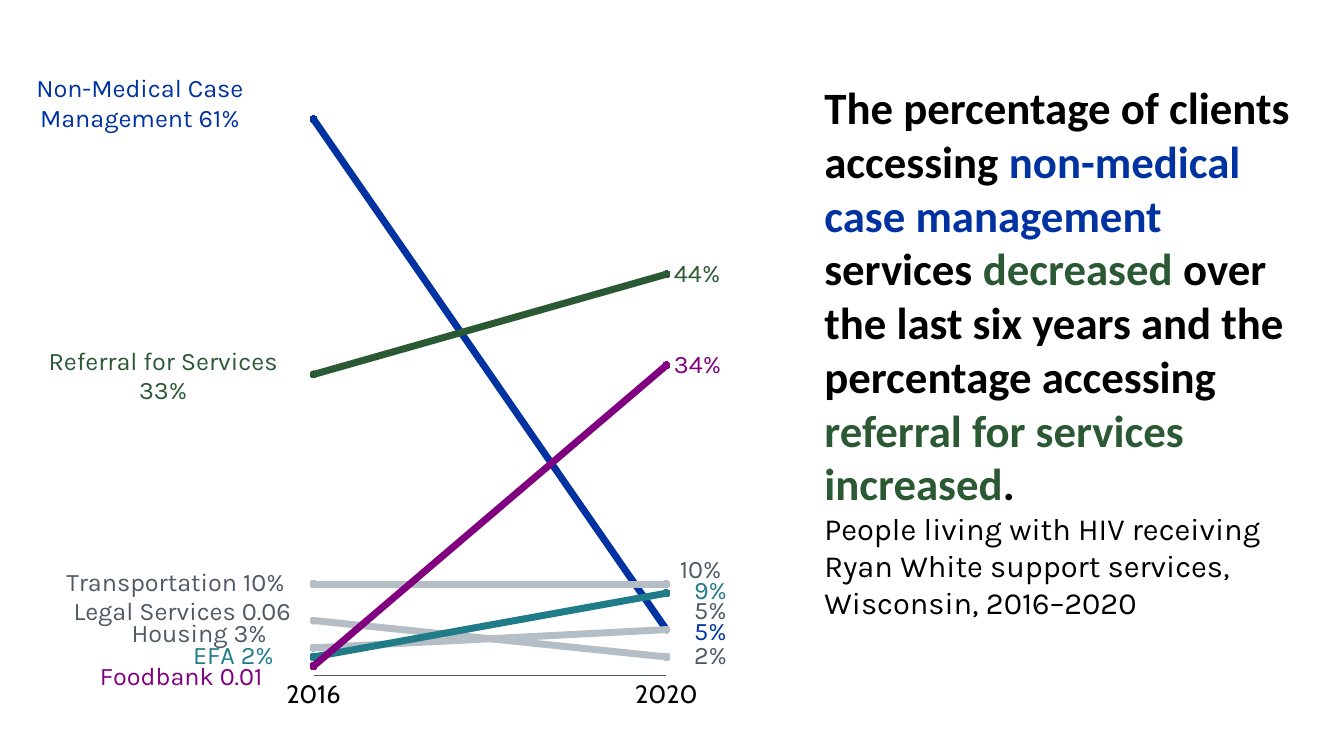
from dataclasses import dataclass

from lxml.etree import SubElement
from pptx import Presentation
from pptx.chart.data import CategoryChartData
from pptx.dml.color import RGBColor
from pptx.enum.chart import (XL_CHART_TYPE, XL_LABEL_POSITION, XL_MARKER_STYLE,
                             XL_TICK_LABEL_POSITION, XL_TICK_MARK)
from pptx.oxml import parse_xml
from pptx.oxml.ns import nsdecls, qn
from pptx.util import Inches, Pt

SLIDE_WIDTH, SLIDE_HEIGHT = Inches(13.33), Inches(7.5)
CHART_WIDTH, CHART_HEIGHT = 7.61, 7.08
BLACK, SLATE, SILVER = "000000", "4F5A65", "B5BDC5"
BLUE, GREEN, TEAL, PURPLE = "0033A1", "2A5934", "207C88", "800080"


@dataclass
class Service:
    """One line; label shifts are inches from the usual place beside the point."""
    name: str
    values: tuple[float, float]
    line: str
    ink: str
    start_label: tuple[str, ...]
    start_shift: tuple[float, float]
    end_shift: tuple[float, float] = (0, 0)


@dataclass
class Span:
    text: str
    color: str = BLACK


SERVICES = [
    Service("Non-Medical Case Management", (0.61, 0.05), BLUE, BLUE,
            ("Non-Medical Case", "Management 61%"), (-0.62, -0.15), (0.2, 0.02)),
    Service("Referral for Services", (0.33, 0.44), GREEN, GREEN,
            ("Referral for Services", "33%"), (-0.28, 0.02)),
    Service("Transportation", (0.1, 0.1), SILVER, SLATE,
            ("Transportation 10%",), (-0.21, -0.01), (0.06, -0.14)),
    Service("Legal Services", (0.06, 0.02), SILVER, SLATE,
            ("Legal Services 0.06",), (-0.15, -0.08), (0.2, -0.01)),
    Service("Housing", (0.03, 0.05), SILVER, SLATE,
            ("Housing 3%",), (-0.39, -0.14), (0.2, -0.18)),
    Service("EFA", (0.02, 0.09), TEAL, TEAL,
            ("EFA 2%",), (-0.32, -0.01), (0.2, -0.02)),
    Service("Foodbank", (0.01, 0.34), PURPLE, PURPLE,
            ("Foodbank 0.01",), (-0.43, 0.11)),
]
HEADLINE = [
    Span("The percentage of clients accessing "),
    Span("non-medical case management ", BLUE),
    Span("services "),
    Span("decreased", GREEN),
    Span(" over the last six years and the percentage accessing "),
    Span("referral for services increased", GREEN),
    Span("."),
]
CAPTION = [Span("People living with HIV receiving Ryan White support services, "
                "Wisconsin, 2016–2020")]


def rgb(color: str) -> RGBColor:
    return RGBColor.from_string(color)


def style_font(font, name: str, size: float, color: str, bold: bool = False) -> None:
    font.name, font.size, font.bold = name, Pt(size), bold
    font.color.rgb = rgb(color)


def add_spans(para, spans: list[Span], name: str, size: float, bold: bool = False) -> None:
    for span in spans:
        run = para.add_run()
        run.text = span.text
        style_font(run.font, name, size, span.color, bold)


def set_layout(parent, index: int, **shares) -> None:
    """Place a chart part by hand, with shares of the chart's size."""
    for old in parent.findall(qn("c:layout")):
        parent.remove(old)
    layout = parse_xml(f"<c:layout {nsdecls('c')}><c:manualLayout/></c:layout>")
    for tag, value in shares.items():
        SubElement(layout[0], qn(f"c:{tag}")).set("val", str(value))
    parent.insert(index, layout)


def style_series(series, service: Service) -> None:
    series.smooth = False
    series.format.line.color.rgb = rgb(service.line)
    series.format.line.width = Pt(5)
    marker = series.marker
    marker.style, marker.size = XL_MARKER_STYLE.CIRCLE, 5
    marker.format.fill.solid()
    marker.format.fill.fore_color.rgb = rgb(service.line)
    marker.format.line.color.rgb = rgb(service.line)


def label_series(series, service: Service) -> None:
    labels = series.data_labels
    labels.show_value = True
    labels.number_format, labels.number_format_is_linked = "0%", False
    labels.position = XL_LABEL_POSITION.RIGHT
    style_font(labels.font, "Karla", 18, service.ink)

    start = series.points[0].data_label
    frame = start.text_frame
    frame.word_wrap = False
    for number, text in enumerate(service.start_label):
        para = frame.add_paragraph() if number else frame.paragraphs[0]
        add_spans(para, [Span(text, service.ink)], "Karla", 18)
    start.position = XL_LABEL_POSITION.LEFT

    end = series.points[1].data_label
    style_font(end.font, "Karla", 18, service.ink)
    end.position = XL_LABEL_POSITION.RIGHT

    shifts = (service.start_shift, service.end_shift)
    for element, (x, y) in zip(series._element.iter(qn("c:dLbl")), shifts):
        if x or y:
            set_layout(element, 1, x=round(x / CHART_WIDTH, 4), y=round(y / CHART_HEIGHT, 4))
    for leader in series._element.iter(qn("c:showLeaderLines")):
        leader.set("val", "0")


def style_axes(chart) -> None:
    years, shares = chart.category_axis, chart.value_axis
    years.major_tick_mark = years.minor_tick_mark = XL_TICK_MARK.NONE
    years.tick_label_position = XL_TICK_LABEL_POSITION.NEXT_TO_AXIS
    years.has_major_gridlines = False
    years.format.line.color.rgb = rgb(SLATE)
    years.format.line.width = Pt(0.75)
    style_font(years.tick_labels.font, "Cabin", 18, BLACK)
    shares.visible = shares.has_major_gridlines = False
    shares.major_tick_mark = shares.minor_tick_mark = XL_TICK_MARK.NONE
    shares.minimum_scale, shares.maximum_scale = 0, 0.7
    shares.tick_labels.number_format = "0%"
    shares.tick_labels.number_format_is_linked = False
    axis = shares._element
    crossing = axis.find(qn("c:crossBetween"))
    if crossing is None:
        crossing = parse_xml(f"<c:crossBetween {nsdecls('c')}/>")
        axis.find(qn("c:crosses")).addnext(crossing)
    crossing.set("val", "midCat")


def add_slope_chart(page) -> None:
    data = CategoryChartData(number_format="0%")
    data.categories = ["2016", "2020"]
    for service in SERVICES:
        data.add_series(service.name, service.values)
    chart = page.shapes.add_chart(
        XL_CHART_TYPE.LINE_MARKERS, Inches(0.18), Inches(0.2),
        Inches(CHART_WIDTH), Inches(CHART_HEIGHT), data).chart
    chart.has_legend = chart.has_title = False
    style_font(chart.font, "Calibri", 10, BLACK)
    plot = chart.plots[0]
    plot.vary_by_categories = False
    for series, service in zip(plot.series, SERVICES):
        style_series(series, service)
        label_series(series, service)
    style_axes(chart)
    area = next(chart._chartSpace.iter(qn("c:plotArea")))
    set_layout(area, 0, layoutTarget="inner", xMode="edge", yMode="edge",
               x=0.385, y=0.024, w=0.46, h=0.894)


def add_message(page) -> None:
    box = page.shapes.add_textbox(
        round(SLIDE_WIDTH * 0.606), round(SLIDE_HEIGHT * 0.099),
        round(SLIDE_WIDTH * 0.38), round(SLIDE_HEIGHT * 0.821))
    frame = box.text_frame
    frame.word_wrap = True
    add_spans(frame.paragraphs[0], HEADLINE, "Calibri", 32, bold=True)
    add_spans(frame.add_paragraph(), CAPTION, "Karla", 22)


def main() -> None:
    deck = Presentation()
    deck.slide_width, deck.slide_height = SLIDE_WIDTH, SLIDE_HEIGHT
    page = deck.slides.add_slide(deck.slide_layouts[6])
    add_slope_chart(page)
    add_message(page)
    deck.save("out.pptx")


if __name__ == "__main__":
    main()
